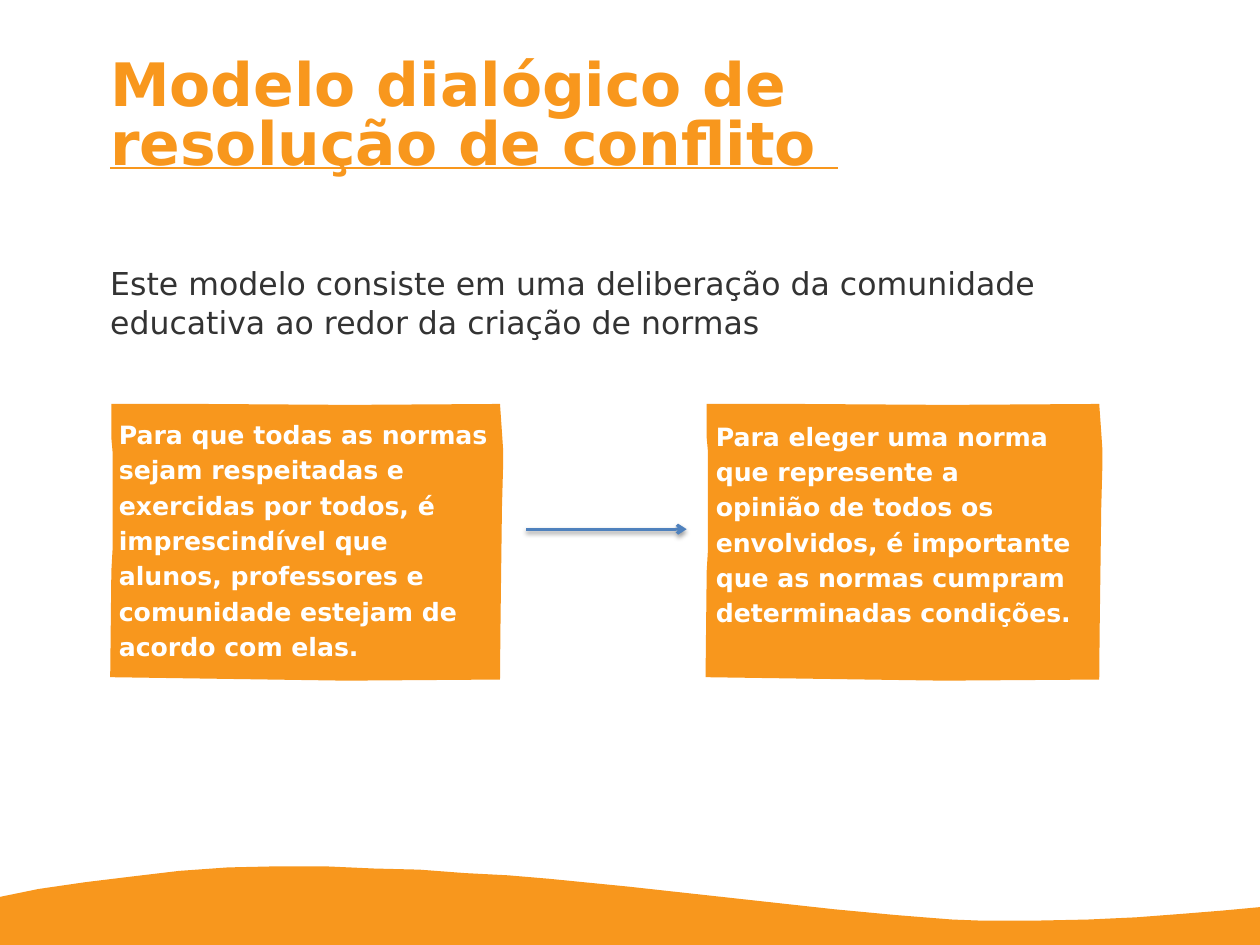
import pptx
import pptx.dml.color
import pptx.enum.shapes
import pptx.enum.text
import pptx.oxml
import pptx.oxml.ns
import pptx.util
from pptx.util import Pt

ORANGE = "F8971D"
DARK_GREY = "333333"
WHITE = "FFFFFF"
BLUE = "4F81BD"
FONT = "DejaVu Sans"

# Card outline: share of the width, distance from the top
CARD_OUTLINE = [
    (0.23, 0), (0.003, 0), (0.003, 21.6), (0.006, 30), (0.006, 93),
    (0.003, 106), (0, 173.5), (0.6, 175.7), (0.992, 175), (0.993, 145),
    (0.995, 106), (0.997, 66), (1, 38), (1, 29.5), (0.997, 18),
    (0.992, 0), (0.61, 0.6),
]

WAVE_CREST = [
    (0, 569.5), (24.5, 564.5), (54, 560.2), (83.5, 556.6), (113.8, 553),
    (144.7, 550.8), (175.7, 550.1), (206.6, 550.1), (237.6, 551.5),
    (266.4, 552.2), (295.2, 554.4), (322.6, 555.8), (348.5, 558),
    (398.9, 563), (529.9, 577.4), (568.1, 581), (586.8, 582.5),
    (604.8, 583.9), (622.8, 584.6), (640.1, 584.6), (657.4, 584.6),
    (690.5, 583.9), (721.4, 582.5), (750.2, 580.3), (776.2, 578.2), (800, 576),
]


def color(hex_code):
    return pptx.dml.color.RGBColor.from_string(hex_code)


def write(paragraph, text, size, fill, spacing, bold=False, underline=False):
    paragraph.text = text
    paragraph.alignment = pptx.enum.text.PP_ALIGN.LEFT
    paragraph.line_spacing = spacing
    for run in paragraph.runs:
        run.font.name = FONT
        run.font.size = Pt(size)
        run.font.bold = bold
        run.font.underline = underline
        run.font.color.rgb = color(fill)


def set_frame(shape, left, top, width, height):
    shape.left, shape.top = Pt(left), Pt(top)
    shape.width, shape.height = Pt(width), Pt(height)
    frame = shape.text_frame
    frame.margin_left = frame.margin_right = 0
    frame.margin_top = frame.margin_bottom = 0
    frame.word_wrap = True
    frame.auto_size = pptx.enum.text.MSO_AUTO_SIZE.NONE
    frame.vertical_anchor = pptx.enum.text.MSO_ANCHOR.TOP
    return frame


def add_text(slide, text, left, top, width, height, **text_format):
    box = slide.shapes.add_textbox(0, 0, 0, 0)
    frame = set_frame(box, left, top, width, height)
    write(frame.paragraphs[0], text, **text_format)


def add_outline(slide, points, fill):
    start, *rest = [(Pt(x), Pt(y)) for x, y in points]
    builder = slide.shapes.build_freeform(*start)
    builder.add_line_segments(rest, close=True)
    shape = builder.convert_to_shape()
    shape.shadow.inherit = False
    shape.fill.solid()
    shape.fill.fore_color.rgb = color(fill)
    shape.line.fill.background()


def add_card(slide, text, left, width, text_left, text_top):
    top = 256.5
    add_outline(slide, [(left + share * width, top + y) for share, y in CARD_OUTLINE], ORANGE)
    add_text(slide, text, text_left, text_top, 236.5, 165,
             size=16, fill=WHITE, spacing=1.17, bold=True)


def add_arrow(slide, left, right, y):
    arrow = slide.shapes.add_connector(
        pptx.enum.shapes.MSO_CONNECTOR.STRAIGHT, Pt(left), Pt(y), Pt(right), Pt(y))
    arrow.line.color.rgb = color(BLUE)
    arrow.line.width = Pt(2)
    namespace = pptx.oxml.ns.nsdecls("a")
    arrow.line._get_or_add_ln().append(
        pptx.oxml.parse_xml(f'<a:tailEnd {namespace} type="arrow"/>'))
    arrow._element.spPr.append(pptx.oxml.parse_xml(
        f'<a:effectLst {namespace}>'
        f'<a:outerShdw blurRad="{Pt(3.1)}" dist="{Pt(1.6)}" dir="5400000" rotWithShape="0">'
        '<a:srgbClr val="000000"><a:alpha val="38000"/></a:srgbClr>'
        '</a:outerShdw></a:effectLst>'))


def main():
    deck = pptx.Presentation()
    deck.slide_width, deck.slide_height = Pt(800), Pt(600)
    slide = deck.slides.add_slide(deck.slide_layouts[5])

    # Title
    heading = set_frame(slide.shapes.title, 70, 31, 661, 81.5)
    write(heading.paragraphs[0], "Modelo dialógico de",
          size=38, fill=ORANGE, spacing=Pt(44.1), bold=True)
    write(heading.add_paragraph(), "resolução de conflito ",
          size=38, fill=ORANGE, spacing=Pt(37.5), bold=True, underline=True)

    # Introduction
    add_text(slide, "Este modelo consiste em uma deliberação da comunidade "
             "educativa ao redor da criação de normas",
             70, 166.5, 640, 55.5, size=20, fill=DARK_GREY, spacing=1.04)

    # Cards and the arrow between them
    add_card(slide, "Para que todas as normas sejam respeitadas e exercidas por "
             "todos, é imprescindível que alunos, professores e comunidade "
             "estejam de acordo com elas.", 70, 249.5, 75.5, 263)
    add_card(slide, "Para eleger uma norma que represente a\vopinião de todos os "
             "envolvidos, é importante que as normas cumpram determinadas "
             "condições.", 448, 252, 454.5, 264)
    add_arrow(slide, 334, 436, 336)

    # Footer wave
    add_outline(slide, WAVE_CREST + [(800, 600), (0, 600)], ORANGE)

    deck.save("out.pptx")


if __name__ == "__main__":
    main()
